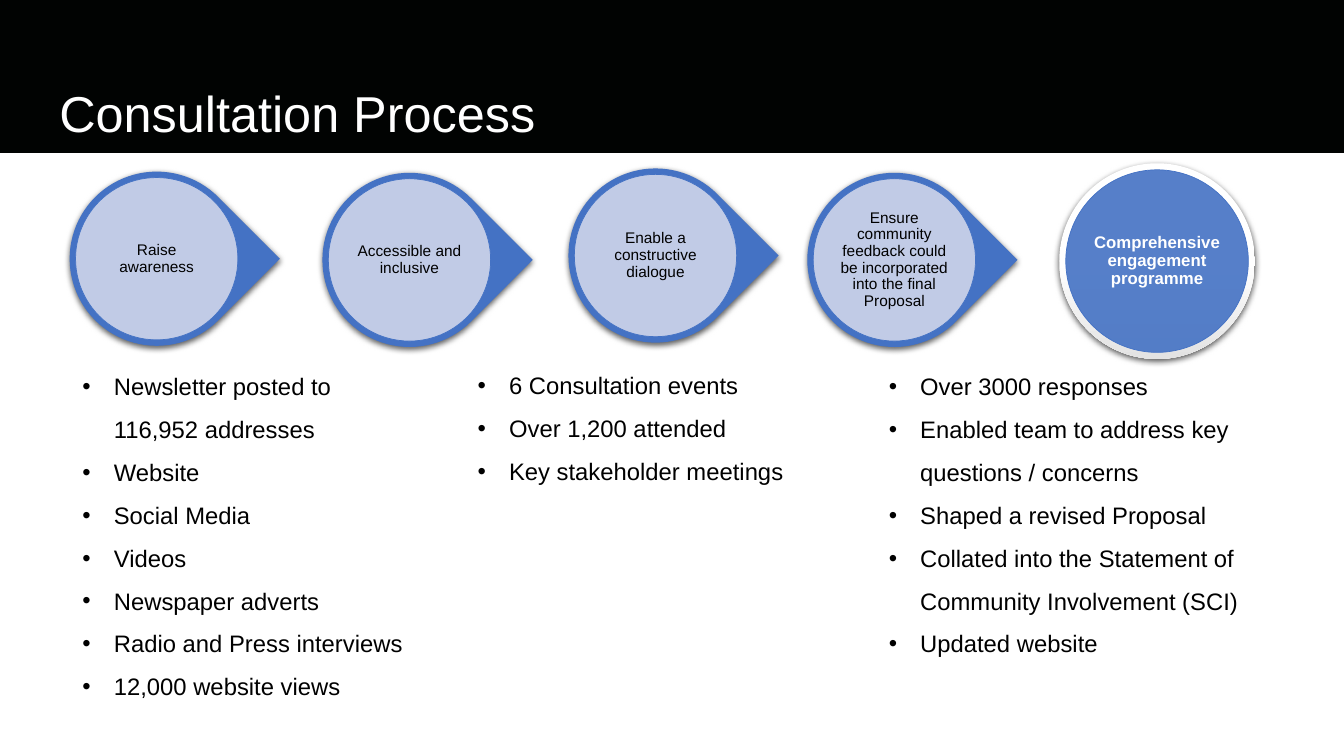
from dataclasses import dataclass

from lxml.etree import SubElement
from pptx import Presentation
from pptx.dml.color import RGBColor
from pptx.enum.shapes import MSO_SHAPE
from pptx.enum.text import MSO_ANCHOR, PP_ALIGN
from pptx.oxml.ns import qn
from pptx.util import Cm, Pt

TITLE = "Consultation Process"
STEPS = [
    (3.95, 6.52, "Raise awareness"),
    (10.32, 6.55, "Accessible and inclusive"),
    (16.52, 6.44, "Enable a constructive dialogue"),
    (22.54, 6.55, "Ensure community feedback could be incorporated into the final Proposal"),
]
GOAL = (29.16, 6.58, "Comprehensive engagement programme")
COLUMNS = [
    ((1.83, 8.89, 9, 8.84), [
        "Newsletter posted to 116,952 addresses",
        "Website",
        "Social Media",
        "Videos",
        "Newspaper adverts",
        "Radio and Press interviews",
        "12,000 website views",
    ]),
    ((11.79, 8.86, 9, 5.56), [
        "6 Consultation events",
        "Over 1,200 attended",
        "Key stakeholder meetings",
    ]),
    ((22.15, 8.89, 9.9, 7.75), [
        "Over 3000 responses",
        "Enabled team to address key questions / concerns",
        "Shaped a revised Proposal",
        "Collated into the Statement of Community Involvement (SCI)",
        "Updated website",
    ]),
]


@dataclass(frozen=True)
class Theme:
    font: str = "Arial"
    band: RGBColor = RGBColor(0x01, 0x03, 0x02)
    blue: RGBColor = RGBColor(0x44, 0x72, 0xC4)
    pale: RGBColor = RGBColor(0xCF, 0xD5, 0xEA)
    grey: RGBColor = RGBColor(0xE3, 0xE3, 0xE3)
    white: RGBColor = RGBColor(0xFF, 0xFF, 0xFF)
    black: RGBColor = RGBColor(0, 0, 0)
    title: int = 36
    body: int = 17
    step: int = 11
    goal: int = 12


T = Theme()


def add_run(p, text, size, color, bold=False):
    r = p.add_run()
    r.text = text
    r.font.name = T.font
    r.font.size = Pt(size)
    r.font.bold = bold
    r.font.color.rgb = color


def add_shadow(sp):
    effects = sp._element.spPr.find(qn("a:effectLst"))
    shadow = SubElement(effects, qn("a:outerShdw"), blurRad="57150", dist="19050",
                        dir="5400000", algn="ctr", rotWithShape="0")
    color = SubElement(shadow, qn("a:srgbClr"), val=str(T.black))
    SubElement(color, qn("a:alpha"), val="63000")


def add_centred(s, kind, x, y, size):
    sp = s.shapes.add_shape(kind, Cm(x - size / 2), Cm(y - size / 2), Cm(size), Cm(size))
    sp.shadow.inherit = False
    return sp


def add_back(s, kind, x, y, size):
    sp = add_centred(s, kind, x, y, size)
    sp.line.fill.background()
    add_shadow(sp)
    return sp


def add_disc(s, x, y, size, fill):
    sp = add_centred(s, MSO_SHAPE.OVAL, x, y, size)
    sp.fill.solid()
    sp.fill.fore_color.rgb = fill
    color = sp._element.spPr.find(qn("a:solidFill")).find(qn("a:srgbClr"))
    SubElement(color, qn("a:alpha"), val="90000")
    sp.line.color.rgb = T.blue
    sp.line.width = Pt(0.5)


def add_label(s, x, y, size, text, points, color, bold=False):
    box = s.shapes.add_textbox(Cm(x - size / 2), Cm(y - size / 2), Cm(size), Cm(size))
    tf = box.text_frame
    tf.word_wrap = True
    tf.vertical_anchor = MSO_ANCHOR.MIDDLE
    tf.margin_left = tf.margin_right = tf.margin_top = tf.margin_bottom = Cm(0.05)
    p = tf.paragraphs[0]
    p.alignment = PP_ALIGN.CENTER
    p.line_spacing = 0.9
    add_run(p, text, points, color, bold)


def add_step(s, x, y, text):
    drop = add_back(s, MSO_SHAPE.TEAR, x, y, 4.39)
    drop.rotation = 45
    drop.fill.solid()
    drop.fill.fore_color.rgb = T.blue
    add_disc(s, x, y, 4.09, T.pale)
    add_label(s, x, y, 2.92, text, T.step, T.black)


def add_goal(s, x, y, text):
    ring = add_back(s, MSO_SHAPE.OVAL, x, y, 4.93)
    ring.fill.gradient()
    ring.fill.gradient_angle = 270
    for stop, position, color in zip(ring.fill.gradient_stops, (0.5, 1), (T.white, T.grey)):
        stop.position = position
        stop.color.rgb = color
    add_disc(s, x, y, 4.6, T.blue)
    add_label(s, x, y, 3.28, text, T.goal, T.white, True)


def add_bullets(s, area, items):
    tf = s.shapes.add_textbox(*map(Cm, area)).text_frame
    tf.word_wrap = True
    for i, item in enumerate(items):
        p = tf.add_paragraph() if i else tf.paragraphs[0]
        pPr = p._p.get_or_add_pPr()
        pPr.set("marL", str(Cm(0.79)))
        pPr.set("indent", str(-Cm(0.79)))
        SubElement(pPr, qn("a:buFont"), typeface=T.font)
        SubElement(pPr, qn("a:buChar"), char="•")
        p.line_spacing = 1.5
        add_run(p, item, T.body, T.black)


def add_title(s, width):
    band = s.shapes.add_shape(MSO_SHAPE.RECTANGLE, 0, 0, width, Cm(3.84))
    band.shadow.inherit = False
    band.fill.solid()
    band.fill.fore_color.rgb = T.band
    band.line.color.rgb = T.band
    band.line.width = Pt(1)
    s.shapes._spTree.insert(2, band._element)

    title = s.shapes.title
    title.left, title.top, title.width, title.height = map(Cm, (1.24, 1.78, 25.58, 2.31))
    tf = title.text_frame
    tf.word_wrap = True
    tf.vertical_anchor = MSO_ANCHOR.MIDDLE
    p = tf.paragraphs[0]
    p.alignment = PP_ALIGN.LEFT
    p.line_spacing = 0.9
    add_run(p, TITLE, T.title, T.white)


def main():
    prs = Presentation()
    prs.slide_width, prs.slide_height = Cm(33.87), Cm(19.05)
    s = prs.slides.add_slide(prs.slide_layouts[5])
    add_title(s, prs.slide_width)
    for step in STEPS:
        add_step(s, *step)
    add_goal(s, *GOAL)
    for area, items in COLUMNS:
        add_bullets(s, area, items)
    prs.save("out.pptx")


if __name__ == "__main__":
    main()
